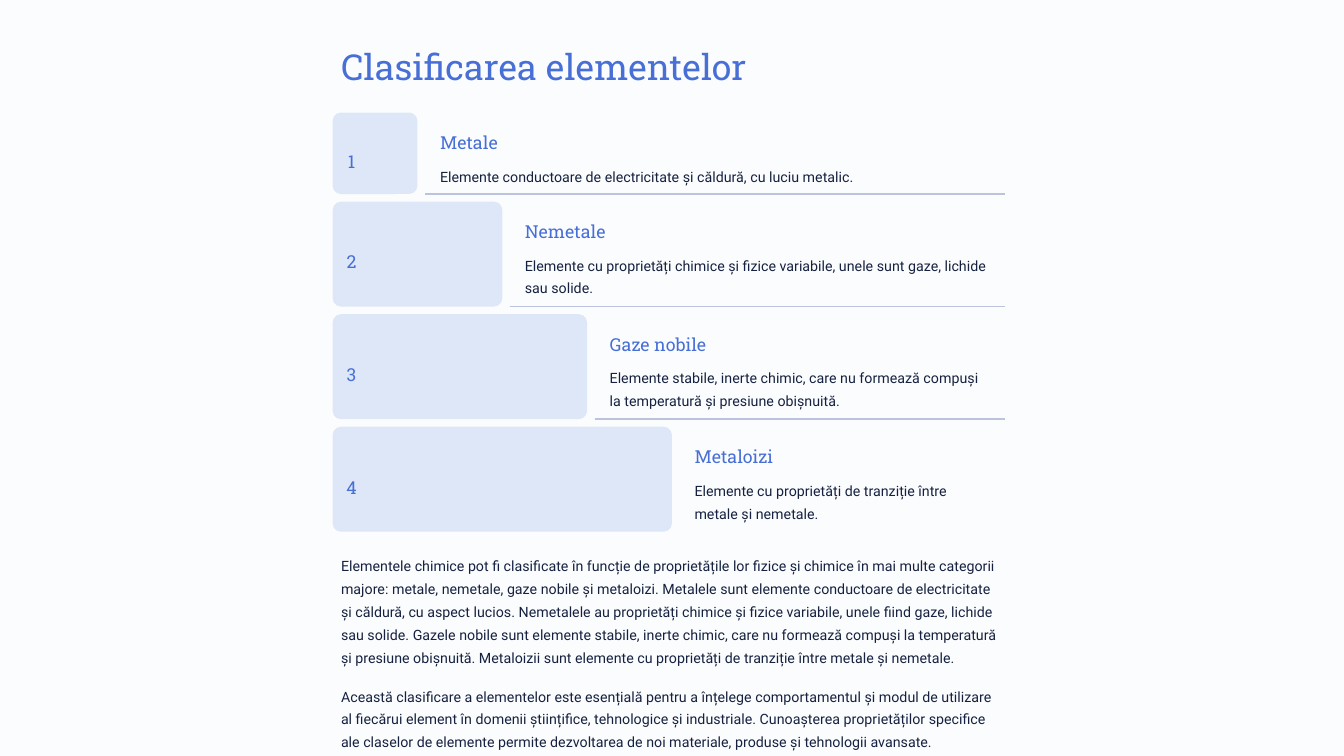
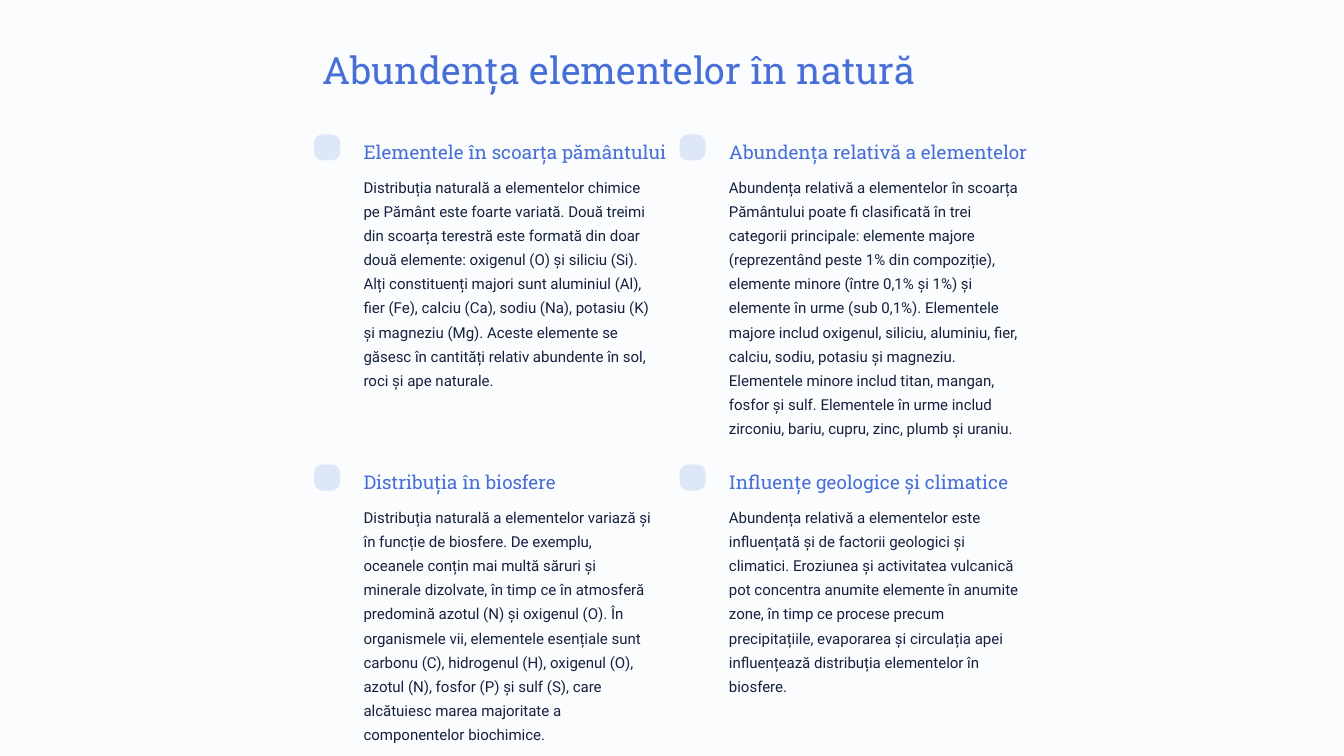
from dataclasses import dataclass

from lxml import etree
from pptx import Presentation
from pptx.dml.color import RGBColor
from pptx.enum.shapes import MSO_CONNECTOR, MSO_SHAPE
from pptx.enum.text import MSO_ANCHOR, MSO_AUTO_SIZE, PP_ALIGN
from pptx.oxml.ns import qn
from pptx.util import Inches, Pt


@dataclass(frozen=True)
class Theme:
    page: RGBColor = RGBColor.from_string("FBFCFE")
    accent: RGBColor = RGBColor.from_string("476FD6")
    ink: RGBColor = RGBColor.from_string("15213F")
    block: RGBColor = RGBColor.from_string("DEE7F7")
    rule: RGBColor = RGBColor.from_string("BBC4DC")
    serif: str = "Roboto Slab"
    sans: str = "Roboto"
    radius: float = 0.1
    # Text size and line spacing in points; the second slide is set a little larger.
    steps: tuple = (
        {"title": (30.6, 38.3), "heading": (15.3, 19.1), "number": (15.3, 24.5),
         "body": (12.2, 19.6)},
        {"title": (32.3, 40.4), "heading": (16.15, 20.2), "body": (12.9, 20.7)},
    )


THEME = Theme()


def write(sp, at, paragraphs, role, sizes, wrap=False, align=PP_ALIGN.LEFT, gap=0):
    """Place a text shape and fill it in the style of its role."""
    for name, value in zip(("left", "top", "width", "height"), at):
        setattr(sp, name, Inches(value))
    tf = sp.text_frame
    frame_format = {"word_wrap": wrap, "auto_size": MSO_AUTO_SIZE.NONE,
                    "vertical_anchor": MSO_ANCHOR.TOP}
    for name, value in frame_format.items():
        setattr(tf, name, value)
    size, leading = sizes[role]
    is_body = role == "body"
    font_format = {"name": THEME.sans if is_body else THEME.serif, "size": Pt(size)}
    para_format = {"alignment": align, "line_spacing": Pt(leading),
                   "space_before": Pt(0), "space_after": Pt(gap)}
    for i, text in enumerate(paragraphs):
        p = tf.add_paragraph() if i else tf.paragraphs[0]
        for name, value in para_format.items():
            setattr(p, name, value)
        r = p.add_run()
        r.text = text
        for name, value in font_format.items():
            setattr(r.font, name, value)
        r.font.color.rgb = THEME.ink if is_body else THEME.accent


def add_block(shapes, x, y, w, h):
    sp = shapes.add_shape(MSO_SHAPE.ROUNDED_RECTANGLE, *map(Inches, (x, y, w, h)))
    sp.adjustments[0] = THEME.radius / min(w, h)
    sp.shadow.inherit = False
    sp.fill.solid()
    sp.fill.fore_color.rgb = THEME.block
    sp.line.fill.background()


prs = Presentation()
prs.slide_width, prs.slide_height = Inches(16), Inches(9)
background = prs.slide_master.background.fill
background.solid()
background.fore_color.rgb = THEME.page
TEXT_WIDTH = 8.08

# Slide 1: four classes as a staircase of blocks, then two paragraphs
CLASSES = [
    ("Metale", "Elemente conductoare de electricitate și căldură, cu luciu metalic."),
    ("Nemetale", "Elemente cu proprietăți chimice și fizice variabile, unele sunt gaze, "
                 "lichide sau solide."),
    ("Gaze nobile", "Elemente stabile, inerte chimic, care nu formează compuși la "
                    "temperatură și presiune obișnuită."),
    ("Metaloizi", "Elemente cu proprietăți de tranziție între metale și nemetale."),
]
SUMMARY = [
    "Elementele chimice pot fi clasificate în funcție de proprietățile lor fizice și chimice "
    "în mai multe categorii majore: metale, nemetale, gaze nobile și metaloizi. Metalele sunt "
    "elemente conductoare de electricitate și căldură, cu aspect lucios. Nemetalele au "
    "proprietăți chimice și fizice variabile, unele fiind gaze, lichide sau solide. Gazele "
    "nobile sunt elemente stabile, inerte chimic, care nu formează compuși la temperatură și "
    "presiune obișnuită. Metaloizii sunt elemente cu proprietăți de tranziție între metale și "
    "nemetale.",
    "Această clasificare a elementelor este esențială pentru a înțelege comportamentul și "
    "modul de utilizare al fiecărui element în domenii științifice, tehnologice și "
    "industriale. Cunoașterea proprietăților specifice ale claselor de elemente permite "
    "dezvoltarea de noi materiale, produse și tehnologii avansate.",
]
LEFT, RIGHT, GAP, STEP = 3.96, 11.96, 0.09, 1.01

slide = prs.slides.add_slide(prs.slide_layouts[1])
shapes, sizes = slide.shapes, THEME.steps[0]
write(shapes.title, (LEFT, 0.46, TEXT_WIDTH, 0.53), ["Clasificarea elementelor"],
      "title", sizes, wrap=True)

top = 1.34
for number, (heading, text) in enumerate(CLASSES, 1):
    width = STEP * number
    height = 0.97 if number == 1 else 1.25
    text_x = LEFT + width + 0.17
    add_block(shapes, LEFT, top, width, height)
    for at, line, role, wrap, align in (
        ((4.13, top + height / 2 - 0.17, 0.11, 0.34), str(number), "number", False,
         PP_ALIGN.CENTER),
        ((text_x, top + 0.17, 2.13, 0.27), heading, "heading", False, PP_ALIGN.LEFT),
        ((text_x, top + 0.54, RIGHT - GAP - text_x, 0.54), text, "body", True,
         PP_ALIGN.LEFT),
    ):
        write(shapes.add_textbox(0, 0, 0, 0), at, [line], role, sizes, wrap, align)
    bottom = top + height
    if number < len(CLASSES):
        rule = shapes.add_connector(MSO_CONNECTOR.STRAIGHT, Inches(LEFT + width + GAP),
                                    Inches(bottom), Inches(RIGHT), Inches(bottom))
        rule.line.color.rgb = THEME.rule
        rule.line.width = Pt(1.2)
        etree.SubElement(rule._element.spPr, qn("a:effectLst"))
    top = bottom + GAP

body = slide.placeholders[1]
write(body, (LEFT, 6.52, TEXT_WIDTH, 2.37), SUMMARY, "body", sizes, wrap=True, gap=13.6)
for p in body.text_frame.paragraphs:
    pPr = p._p.get_or_add_pPr()
    pPr.set("marL", "0")
    pPr.set("indent", "0")
    etree.SubElement(pPr, qn("a:buNone"))

# Slide 2: two by two topics, each with a small marker
TOPICS = [
    ("Elementele în scoarța pământului",
     "Distribuția naturală a elementelor chimice pe Pământ este foarte variată. Două treimi "
     "din scoarța terestră este formată din doar două elemente: oxigenul (O) și siliciu (Si). "
     "Alți constituenți majori sunt aluminiul (Al), fier (Fe), calciu (Ca), sodiu (Na), "
     "potasiu (K) și magneziu (Mg). Aceste elemente se găsesc în cantități relativ abundente "
     "în sol, roci și ape naturale.", 2.58),
    ("Abundența relativă a elementelor",
     "Abundența relativă a elementelor în scoarța Pământului poate fi clasificată în trei "
     "categorii principale: elemente majore (reprezentând peste 1% din compoziție), elemente "
     "minore (între 0,1% și 1%) și elemente în urme (sub 0,1%). Elementele majore includ "
     "oxigenul, siliciu, aluminiu, fier, calciu, sodiu, potasiu și magneziu. Elementele "
     "minore includ titan, mangan, fosfor și sulf. Elementele în urme includ zirconiu, bariu, "
     "cupru, zinc, plumb și uraniu.", 3.16),
    ("Distribuția în biosfere",
     "Distribuția naturală a elementelor variază și în funcție de biosfere. De exemplu, "
     "oceanele conțin mai multă săruri și minerale dizolvate, în timp ce în atmosferă "
     "predomină azotul (N) și oxigenul (O). În organismele vii, elementele esențiale sunt "
     "carbonu (C), hidrogenul (H), oxigenul (O), azotul (N), fosfor (P) și sulf (S), care "
     "alcătuiesc marea majoritate a componentelor biochimice.", 2.58),
    ("Influențe geologice și climatice",
     "Abundența relativă a elementelor este influențată și de factorii geologici și "
     "climatici. Eroziunea și activitatea vulcanică pot concentra anumite elemente în anumite "
     "zone, în timp ce procese precum precipitațiile, evaporarea și circulația apei "
     "influențează distribuția elementelor în biosfere.", 2.01),
]
GRID_LEFT, GRID_TOP, COL_STEP, ROW_STEP, MARKER = 3.74, 1.6, 4.35, 3.93, 0.31

slide = prs.slides.add_slide(prs.slide_layouts[5])
shapes, sizes = slide.shapes, THEME.steps[1]
write(shapes.title, (GRID_LEFT, 0.49, TEXT_WIDTH, 0.56),
      ["Abundența elementelor în natură"], "title", sizes, wrap=True)

for i, (heading, text, text_height) in enumerate(TOPICS):
    row, col = divmod(i, 2)
    x, y = GRID_LEFT + col * COL_STEP, GRID_TOP + row * ROW_STEP
    text_x = x + 0.49
    add_block(shapes, x, y, MARKER, MARKER)
    write(shapes.add_textbox(0, 0, 0, 0), (text_x, y + 0.01, 3.58, 0.28), [heading],
          "heading", sizes)
    write(shapes.add_textbox(0, 0, 0, 0), (text_x, y + 0.4, 3.66, text_height), [text],
          "body", sizes, wrap=True)

prs.save("out.pptx")
